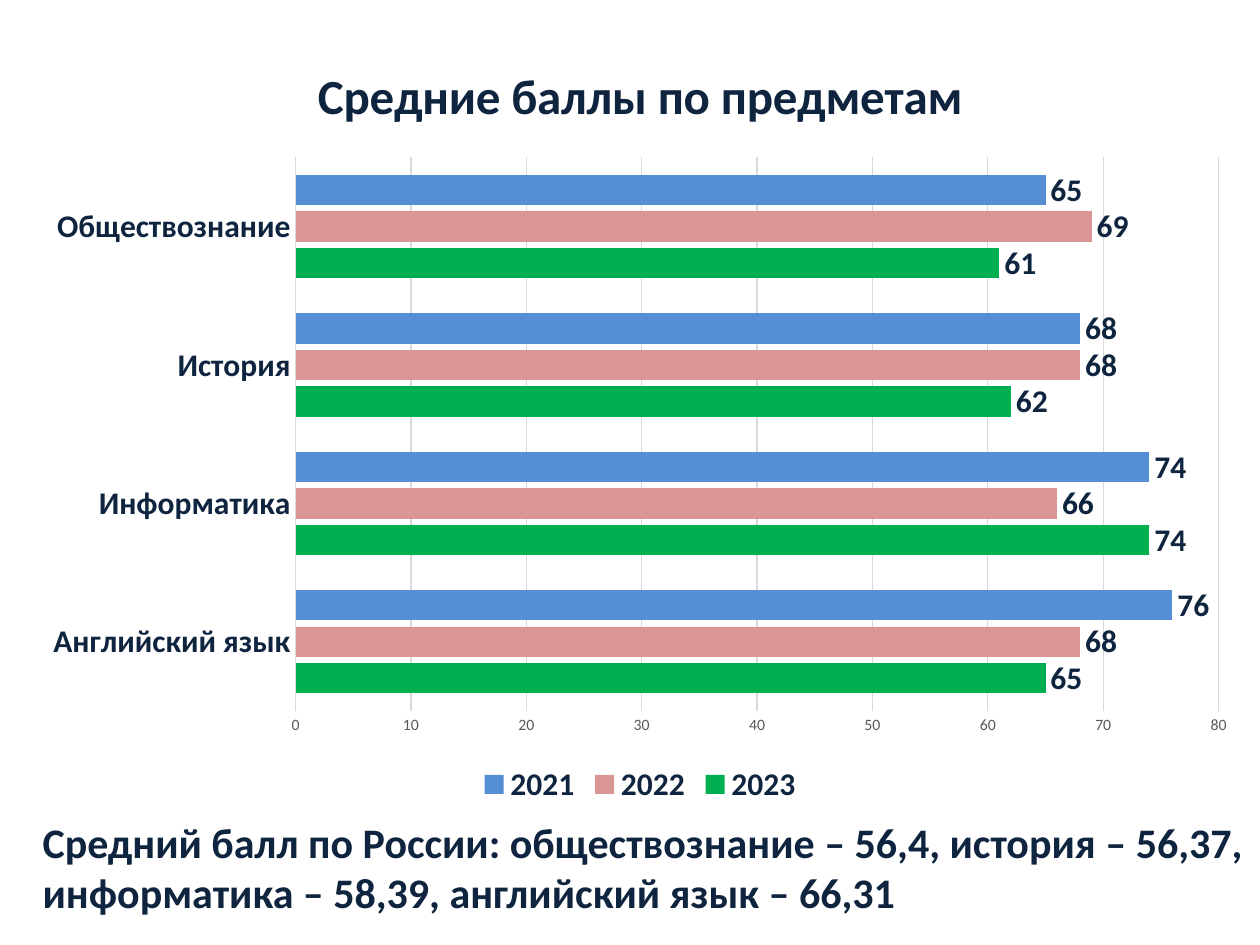
from dataclasses import dataclass

from pptx import Presentation
from pptx import util as u
from pptx.chart.data import CategoryChartData
from pptx.dml.color import RGBColor
from pptx.enum import chart as ch, text

W, H = u.Inches(10), u.Inches(7.5)


@dataclass(frozen=True)
class Theme:
    font: str = "Calibri"
    ink: str = "0F243E"
    muted: str = "595959"
    grid: str = "D9D9D9"
    title: int = 28
    note: int = 24
    label: int = 18
    tick: int = 9


T = Theme()
CATEGORIES = ["Английский язык", "Информатика", "История", "Обществознание"]
SERIES = {
    "2023": ("00B050", [65, 74, 62, 61]),
    "2022": ("D99694", [68, 66, 68, 69]),
    "2021": ("558ED5", [76, 74, 68, 65]),
}
TITLE = "Средние баллы по предметам"
NOTE = ("Средний балл по России: обществознание – 56,4, история – 56,37, "
        "информатика – 58,39, английский язык – 66,31")


def set_all(obj, **values):
    for name, value in values.items():
        setattr(obj, name, value)


def style_font(font, size, color=T.ink, bold=True):
    set_all(font, name=T.font, size=u.Pt(size), bold=bold)
    font.color.rgb = RGBColor.from_string(color)


def style_line(line, width):
    line.color.rgb = RGBColor.from_string(T.grid)
    line.width = u.Pt(width)


def box(left, top, width, height):
    return int(W * left), int(H * top), int(W * width), int(H * height)


def add_run(tf, content, size):
    r = tf.paragraphs[0].add_run()
    r.text = content
    style_font(r.font, size)


def style_axes(chart):
    cat, val = chart.category_axis, chart.value_axis
    for axis in (cat, val):
        set_all(axis, major_tick_mark=ch.XL_TICK_MARK.NONE,
                minor_tick_mark=ch.XL_TICK_MARK.NONE)
    style_font(cat.tick_labels.font, T.label)
    style_line(cat.format.line, 1)
    style_font(val.tick_labels.font, T.tick, T.muted, False)
    set_all(val, minimum_scale=0, maximum_scale=80, major_unit=10,
            has_major_gridlines=True)
    val.format.line.fill.background()
    style_line(val.major_gridlines.format.line, 0.75)


def style_series(plot):
    set_all(plot, gap_width=115, overlap=-20, vary_by_categories=False)
    for series in plot.series:
        series.format.fill.solid()
        series.format.fill.fore_color.rgb = RGBColor.from_string(SERIES[series.name][0])
        labels = series.data_labels
        set_all(labels, show_value=True, position=ch.XL_LABEL_POSITION.OUTSIDE_END)
        style_font(labels.font, T.label)


def add_score_chart(s, frame):
    data = CategoryChartData(number_format="General")
    data.categories = CATEGORIES
    for name, (_, values) in SERIES.items():
        data.add_series(name, values)
    chart = s.shapes.add_chart(ch.XL_CHART_TYPE.BAR_CLUSTERED, *frame, data).chart
    style_font(chart.font, 10, "000000", False)
    set_all(chart, has_title=True, has_legend=True)
    add_run(chart.chart_title.text_frame, TITLE, T.title)
    chart.chart_title.include_in_layout = False
    set_all(chart.legend, position=ch.XL_LEGEND_POSITION.BOTTOM, include_in_layout=False)
    style_font(chart.legend.font, T.label)
    style_axes(chart)
    style_series(chart.plots[0])


def add_note(s, frame):
    tf = s.shapes.add_textbox(*frame).text_frame
    set_all(tf, word_wrap=True, auto_size=text.MSO_AUTO_SIZE.SHAPE_TO_FIT_TEXT)
    add_run(tf, NOTE, T.note)


def main():
    prs = Presentation()
    set_all(prs, slide_width=W, slide_height=H)
    s = prs.slides.add_slide(prs.slide_layouts[6])
    add_score_chart(s, box(0.023, 0.033, 0.97, 0.824))
    add_note(s, box(0.024, 0.857, 0.976, 0.121))
    prs.save("out.pptx")


if __name__ == "__main__":
    main()
